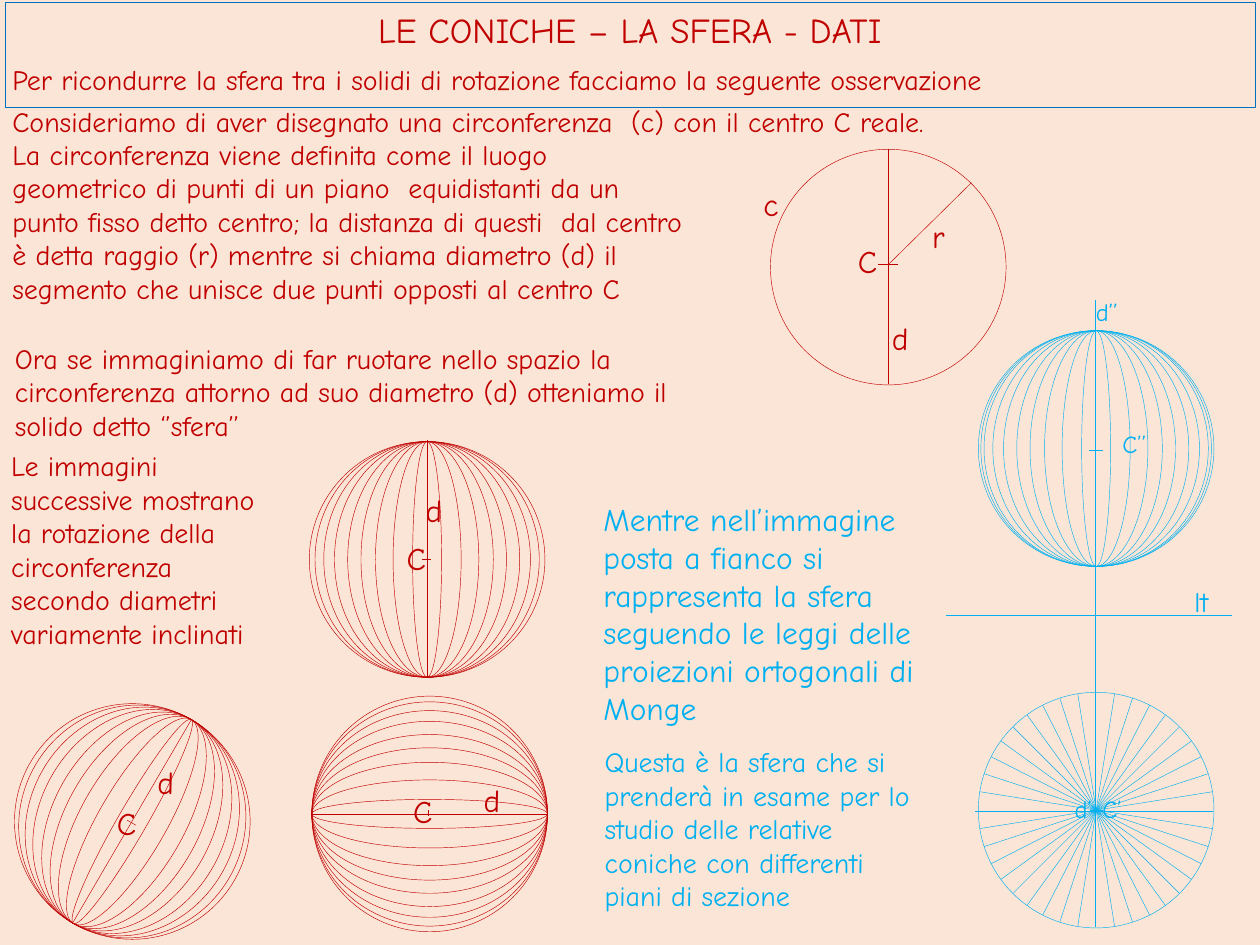
"""Build the slide on the sphere as a solid of rotation."""
from math import cos, radians, sin

from lxml import etree
from pptx import Presentation
from pptx.dml.color import RGBColor
from pptx.enum.shapes import MSO_CONNECTOR, MSO_SHAPE
from pptx.enum.text import MSO_ANCHOR, MSO_AUTO_SIZE, PP_ALIGN
from pptx.oxml.ns import qn
from pptx.util import Inches, Pt

STRAIGHT = MSO_CONNECTOR.STRAIGHT
ELLIPSE = MSO_SHAPE.OVAL
TOP, MIDDLE = MSO_ANCHOR.TOP, MSO_ANCHOR.MIDDLE
CENTER = PP_ALIGN.CENTER
GROW = MSO_AUTO_SIZE.SHAPE_TO_FIT_TEXT

COLORS = {"paper": "FBE5D6", "red": "C00000", "blue": "00B0F0", "frame": "0070C0"}
FONT = "Comic Neue"
HAIRLINE = 0.25
DIAMETER = 1.87
RADIUS = DIAMETER / 2
MERIDIAN_WIDTHS = [1.87, 1.78, 1.64, 1.47, 1.26, 1.05, 0.82, 0.54, 0.23]
RAY_STEP = 9


class SphereSlide:
    """Hold the slide and its style, and draw each kind of element."""

    def __init__(self, slide):
        self.slide = slide
        self.shapes = slide.shapes
        slide.background.fill.solid()
        slide.background.fill.fore_color.rgb = self.rgb("paper")

    def rgb(self, color):
        return RGBColor.from_string(COLORS[color])

    def outline(self, element, color):
        element.line.color.rgb = self.rgb(color)
        element.line.width = Pt(HAIRLINE)

    def add_words(self, frame, words, size, color, anchor=TOP):
        frame.word_wrap = True
        frame.auto_size = GROW
        frame.vertical_anchor = anchor
        run = frame.paragraphs[0].add_run()
        run.text = words
        run.font.name = FONT
        run.font.size = Pt(size)
        run.font.color.rgb = self.rgb(color)

    def title(self, words, left, top, width, height):
        heading = self.shapes.title
        heading.left, heading.top = Inches(left), Inches(top)
        heading.width, heading.height = Inches(width), Inches(height)
        heading.fill.solid()
        heading.fill.fore_color.rgb = self.rgb("paper")
        self.outline(heading, "frame")
        self.add_words(heading.text_frame, words, 20, "red")
        heading.text_frame.paragraphs[0].alignment = CENTER

    def text(self, words, left, top, width, height, size=16, color="red", anchor=TOP):
        box = self.shapes.add_textbox(Inches(left), Inches(top), Inches(width), Inches(height))
        self.add_words(box.text_frame, words, size, color, anchor)

    def line(self, x1, y1, x2, y2, color="red"):
        segment = self.shapes.add_connector(
            STRAIGHT, Inches(x1), Inches(y1), Inches(x2), Inches(y2))
        self.outline(segment, color)
        etree.SubElement(segment._element.spPr, qn("a:effectLst"))

    def ellipse(self, x, y, width=DIAMETER, color="red", rotation=0):
        curve = self.shapes.add_shape(
            ELLIPSE, Inches(x - width / 2), Inches(y - RADIUS), Inches(width), Inches(DIAMETER))
        curve.shadow.inherit = False
        curve.fill.background()
        self.outline(curve, color)
        curve.rotation = rotation

    def sphere(self, x, y, widths=MERIDIAN_WIDTHS, color="red", rotation=0):
        for width in widths:
            self.ellipse(x, y, width, color, rotation)

    def rays(self, x, y, color):
        self.ellipse(x, y, color=color)
        for degrees in range(RAY_STEP, 180, RAY_STEP):
            if degrees != 90:
                dx = RADIUS * sin(radians(degrees))
                dy = RADIUS * cos(radians(degrees))
                self.line(x + dx, y - dy, x - dx, y + dy, color)


def main():
    deck = Presentation()
    deck.slide_width, deck.slide_height = Inches(10), Inches(7.5)
    page = SphereSlide(deck.slides.add_slide(deck.slide_layouts[5]))

    page.title("LE CONICHE – LA SFERA - DATI", 0.04, 0.02, 9.92, 0.39)

    page.sphere(8.7, 3.56, [*MERIDIAN_WIDTHS, 1.83], "blue")
    page.rays(8.7, 6.43, "blue")
    projection_lines = [
        (8.64, 3.57, 8.75, 3.57), (8.69, 3.52, 8.69, 3.62),
        (8.69, 2.38, 8.69, 4.49), (8.69, 3.57, 8.69, 6.48),
        (8.69, 6.43, 8.69, 7.36), (7.51, 4.88, 9.78, 4.88),
        (7.74, 6.44, 9.63, 6.44), (8.65, 6.43, 8.75, 6.43),
    ]
    for ends in projection_lines:
        page.line(*ends, "blue")

    page.ellipse(7.05, 2.12)
    page.sphere(3.39, 4.44)
    page.sphere(1.05, 6.52, rotation=30)
    page.sphere(3.41, 6.46, rotation=90)
    diameters = [
        (7.05, 1.18, 7.05, 3.05), (3.39, 3.49, 3.39, 5.37),
        (1.52, 5.71, 0.58, 7.32), (4.34, 6.46, 2.47, 6.46),
    ]
    center_marks = [
        (6.97, 2.1, 7.13, 2.1), (7.05, 2.02, 7.05, 2.17),
        (3.35, 4.44, 3.42, 4.44), (1.01, 6.51, 1.08, 6.55),
        (3.4, 6.43, 3.4, 6.48),
    ]
    radius = (7.71, 1.45, 7.05, 2.1)
    for ends in [*diameters, *center_marks, radius]:
        page.line(*ends)

    red_labels = [
        ("C", 6.71, 1.87), ("r", 7.3, 1.67), ("d", 6.98, 2.48), ("c", 5.96, 1.42),
        ("C", 3.13, 4.23), ("d", 3.28, 3.85), ("C", 0.83, 6.33), ("d", 1.15, 6.01),
        ("C", 3.18, 6.24), ("d", 3.74, 6.15),
    ]
    for letter, left, top in red_labels:
        page.text(letter, left, top, 0.34 if letter == "c" else 0.3, 0.4, 18)

    blue_labels = [
        ("C’’", 8.81, 3.35), ("d’’", 8.6, 2.3), ("C’", 8.65, 6.25), ("d’", 8.43, 6.25),
    ]
    for letter, left, top in blue_labels:
        page.text(letter, left, top, 0.47, 0.34, 14, "blue", MIDDLE)
    page.text("lt", 9.38, 4.59, 0.38, 0.37, color="blue")

    page.text("Per ricondurre la sfera tra i solidi di rotazione facciamo la seguente "
              "osservazione", 0, 0.45, 9.92, 0.37)
    page.text("Consideriamo di aver disegnato una circonferenza  (c) con il centro C reale.",
              0, 0.78, 9.51, 0.37)
    page.text("La circonferenza viene definita come il luogo geometrico di punti di un piano  "
              "equidistanti da un punto fisso detto centro; la distanza di questi  dal centro "
              "è detta raggio (r) mentre si chiama diametro (d) il segmento che unisce due "
              "punti opposti al centro C", 0, 1.04, 5.55, 1.45)
    page.text("Ora se immaginiamo di far ruotare nello spazio la circonferenza attorno ad suo "
              "diametro (d) otteniamo il solido detto ‘’sfera’’", 0.02, 2.66, 5.73, 0.91)
    page.text("Le immagini successive mostrano la rotazione della circonferenza secondo "
              "diametri variamente inclinati", -0.01, 3.51, 2.28, 1.99)
    page.text("Mentre nell’immagine posta a fianco si rappresenta la sfera seguendo le leggi "
              "delle proiezioni ortogonali di Monge", 4.69, 3.92, 2.68, 1.93, 18, "blue")
    page.text("Questa è la sfera che si prenderà in esame per lo studio delle relative "
              "coniche con differenti piani di sezione", 4.7, 5.86, 2.72, 1.45, color="blue")

    deck.save("out.pptx")


if __name__ == "__main__":
    main()
